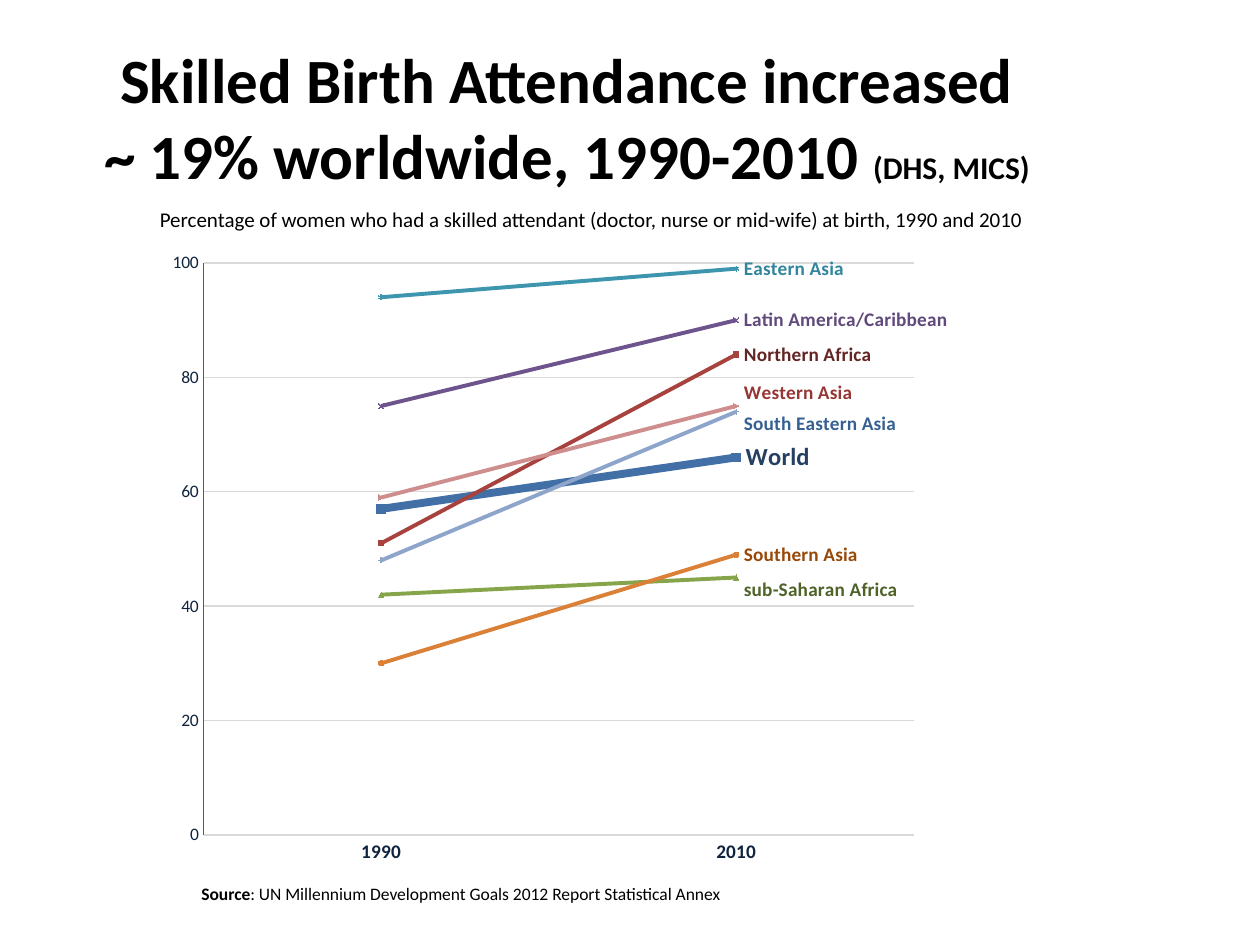
from lxml.etree import SubElement
from pptx import Presentation
from pptx.chart.data import CategoryChartData
from pptx.dml.color import RGBColor
from pptx.enum.chart import XL_CHART_TYPE, XL_LABEL_POSITION, XL_MARKER_STYLE as MARK, XL_TICK_MARK
from pptx.enum.text import MSO_ANCHOR, MSO_AUTO_SIZE, PP_ALIGN
from pptx.oxml import parse_xml
from pptx.oxml.ns import nsdecls, qn
from pptx.util import Inches, Pt

WIDE, HIGH = Inches(10), Inches(7.5)
FONT = "Calibri"
YEARS = ["1990", "2010"]
NAVY = "0F243E"
BASE = {"width": 2.25, "size": 3, "text": 11, "drop": 0}
LINES = [
    {"name": "World", "vals": (57, 66), "line": "416FA6", "ink": "254061",
     "mark": MARK.SQUARE, "width": 4.5, "size": 5, "text": 14},
    {"name": "Northern Africa", "vals": (51, 84), "line": "A8423F", "ink": "632523", "mark": MARK.SQUARE},
    {"name": "sub-Saharan Africa", "vals": (42, 45), "line": "86A44A", "ink": "4F6228",
     "mark": MARK.TRIANGLE, "drop": 0.02},
    {"name": "Latin America/Caribbean", "vals": (75, 90), "line": "6E548D", "ink": "604A7B", "mark": MARK.X},
    {"name": "Eastern Asia", "vals": (94, 99), "line": "3D96AE", "ink": "31859C", "mark": MARK.STAR},
    {"name": "Southern Asia", "vals": (30, 49), "line": "DA8137", "ink": "984807", "mark": MARK.CIRCLE},
    {"name": "South Eastern Asia", "vals": (48, 74), "line": "8EA5CB", "ink": "376092",
     "mark": MARK.PLUS, "drop": 0.02},
    {"name": "Western Asia", "vals": (59, 75), "line": "CE8E8D", "ink": "953735",
     "mark": MARK.DOT, "drop": -0.02},
]


def share(left, top, width, height):
    """Turn percentages of the slide into lengths."""
    return (int(WIDE * left / 100), int(HIGH * top / 100),
            int(WIDE * width / 100), int(HIGH * height / 100))


def apply(item, form):
    """Set each attribute named in a dict."""
    for key, value in form.items():
        setattr(item, key, value)


def tint(target, color):
    """Give a color object a hex value."""
    target.rgb = RGBColor.from_string(color)


def style(font, size, color="000000", bold=False):
    """Format a font."""
    apply(font, {"name": FONT, "size": Pt(size), "bold": bold})
    tint(font.color, color)


def stroke(line, color, width):
    """Format a line."""
    tint(line.color, color)
    line.width = Pt(width)


def write(para, runs):
    """Add runs of text, size and weight to a paragraph."""
    for text, size, bold in runs:
        run = para.add_run()
        run.text = text
        style(run.font, size, bold=bold)


def head(slide, box):
    """Fill the title placeholder."""
    title = slide.shapes.title
    apply(title, dict(zip(("left", "top", "width", "height"), box)))
    frame = title.text_frame
    apply(frame, {"word_wrap": True, "vertical_anchor": MSO_ANCHOR.MIDDLE,
                  "auto_size": MSO_AUTO_SIZE.NONE})
    para = frame.paragraphs[0]
    para.alignment = PP_ALIGN.CENTER
    write(para, [("Skilled Birth Attendance increased", 36, True)])
    para.add_line_break()
    write(para, [("~ 19% worldwide, 1990-2010 ", 36, True), ("(DHS, MICS)", 18, True)])


def note(slide, box, runs):
    """Place a line of small text."""
    frame = slide.shapes.add_textbox(*box).text_frame
    frame.word_wrap = True
    write(frame.paragraphs[0], runs)


def place(parent, spot, **parts):
    """Insert a manual chart layout into a parent element."""
    old = parent.find(qn("c:layout"))
    if old is not None:
        parent.remove(old)
    layout = parse_xml(f"<c:layout {nsdecls('c')}><c:manualLayout/></c:layout>")
    for key, value in parts.items():
        SubElement(layout[0], qn(f"c:{key}")).set("val", str(value))
    parent.insert(spot, layout)


def axes(chart):
    """Format both axes and the grid."""
    cat, val = chart.category_axis, chart.value_axis
    for axis in (cat, val):
        apply(axis, {"major_tick_mark": XL_TICK_MARK.NONE, "minor_tick_mark": XL_TICK_MARK.NONE})
    style(cat.tick_labels.font, 11, NAVY, True)
    cat.format.line.fill.background()
    apply(val, {"minimum_scale": 0, "maximum_scale": 100, "major_unit": 20,
                "has_major_gridlines": True})
    style(val.tick_labels.font, 10, NAVY)
    stroke(val.format.line, "376092", 0.75)
    stroke(val.major_gridlines.format.line, "D9D9D9", 0.75)


def trend(series, look):
    """Format one series and name it at its last point."""
    series.smooth = False
    stroke(series.format.line, look["line"], look["width"])
    mark = series.marker
    apply(mark, {"style": look["mark"], "size": look["size"]})
    mark.format.fill.solid()
    tint(mark.format.fill.fore_color, look["line"])
    stroke(mark.format.line, look["line"], 0.75)
    series.data_labels.show_value = False
    label = series.points[1].data_label
    style(label.font, look["text"], look["ink"], True)
    label.position = XL_LABEL_POSITION.RIGHT


def graph(slide, box):
    """Draw the line chart."""
    data = CategoryChartData()
    data.categories = YEARS
    for row in LINES:
        data.add_series(row["name"], row["vals"])
    chart = slide.shapes.add_chart(XL_CHART_TYPE.LINE_MARKERS, *box, data).chart
    apply(chart, {"has_legend": False, "has_title": False})
    style(chart.font, 10)
    chart.plots[0].vary_by_categories = False
    axes(chart)
    looks = [BASE | row for row in LINES]
    for series, look in zip(chart.plots[0].series, looks):
        trend(series, look)
    for label, look in zip(chart.element.iter(qn("c:dLbl")), looks):
        label.find(qn("c:showVal")).set("val", "0")
        label.find(qn("c:showSerName")).set("val", "1")
        if look["drop"]:
            place(label, 1, x=0, y=look["drop"])
    area = next(chart.element.iter(qn("c:plotArea")))
    place(area, 0, layoutTarget="inner", xMode="edge", yMode="edge",
          x=0.052, y=0.026, w=0.657, h=0.908)


def main():
    """Build and save the slide."""
    deck = Presentation()
    apply(deck, {"slide_width": WIDE, "slide_height": HIGH})
    slide = deck.slides.add_slide(deck.slide_layouts[5])
    head(slide, share(0, 4, 90, 16.67))
    graph(slide, share(11.7, 26.1, 85.8, 66.67))
    note(slide, share(15, 92.8, 50, 3.6),
         [("Source", 10, True),
          (": UN Millennium Development Goals 2012 Report Statistical Annex", 10, False)])
    note(slide, share(11.7, 21.2, 75.8, 4),
         [("Percentage of women who had a skilled attendant (doctor, nurse or mid-wife) "
           "at birth, 1990 and 2010", 12, False)])
    deck.save("out.pptx")


if __name__ == "__main__":
    main()
